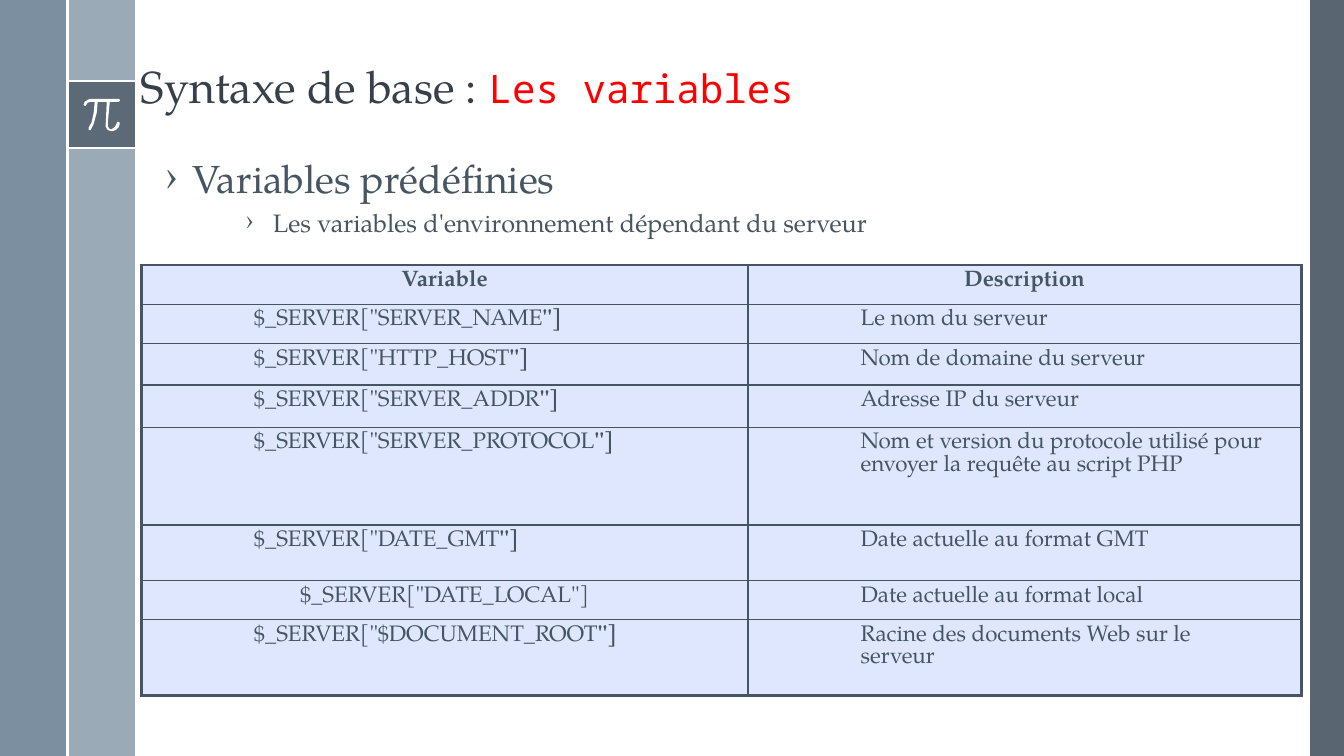
from lxml.etree import SubElement
from pptx import Presentation
from pptx.dml.color import RGBColor
from pptx.enum.shapes import MSO_CONNECTOR, MSO_SHAPE
from pptx.enum.text import MSO_ANCHOR, PP_ALIGN
from pptx.oxml.ns import qn
from pptx.util import Cm, Pt

SERIF, MONO = "TeX Gyre Pagella", "Noto Sans Mono"
SLATE, WHITE, CELL_FILL = "465562", "FFFFFF", "DEE7FE"
WIDTH, HEIGHT, STRIP = 33.87, 19.05, 1.7
BADGE_TOP, BADGE_BOTTOM = 2.05, 3.74

# left, top, width, height, colour, opacity in percent
PANELS = [
    (33.02, 0, WIDTH - 33.02, HEIGHT, "475562", 90),
    (STRIP, 0, STRIP, HEIGHT, "9BAAB7", 100),
    (0, 0, STRIP, HEIGHT, "6A8093", 88),
    (STRIP, BADGE_TOP, STRIP, BADGE_BOTTOM - BADGE_TOP, "475562", 75),
]
WHITE_LINES = [
    (STRIP, BADGE_TOP, 2 * STRIP, BADGE_TOP),
    (STRIP, BADGE_BOTTOM, 2 * STRIP, BADGE_BOTTOM),
    (STRIP, 0, STRIP, HEIGHT),
]
PI_UNIT = 0.0254
PI_OUTLINE = [
    (118, 98), (90, 98), (87, 98.7), (84.5, 101), (83, 104), (84, 105), (85, 105),
    (87, 102.3), (90, 101), (94, 101), (93, 112), (91, 121), (88, 127), (87.6, 128),
    (88, 129), (89, 129.4), (90, 129), (93, 123), (95.5, 112), (97, 101), (106, 101),
    (105, 122), (105.2, 126), (107, 129), (110, 130), (112, 130), (115, 128.7),
    (117.5, 126), (119, 122), (118, 121), (116.5, 121), (115.8, 122), (114, 126),
    (111, 128), (109, 128), (108, 127), (107.2, 125), (107, 122), (109, 101),
    (118, 101), (119, 100), (119, 99),
]

TITLE = [("Syntaxe de base : ", 32, SERIF, "35404A"), ("Les variables", 28, MONO, "FF0000")]
# text, size, left margin, space before
BULLETS = [
    ("Variables prédéfinies", 28, 0.69, 0),
    ("Les variables d'environnement dépendant du serveur", 18, 2.72, 6),
]
BULLET_HANG = 0.69

HEADINGS = ["Variable", "Description"]
# variable, bold ending, description lines, row height
VARIABLES = [
    ('$_SERVER["SERVER_NAME', '"]', ["Le nom du serveur"], 0.99),
    ('$_SERVER["HTTP_HOST', '"]', ["Nom de domaine du serveur"], 1.04),
    ('$_SERVER["SERVER_ADDR', '"]', ["Adresse IP du serveur"], 1.07),
    ('$_SERVER["SERVER_PROTOCOL', '"]',
     ["Nom et version du protocole utilisé pour envoyer la requête au script PHP"], 2.46),
    ('$_SERVER["DATE_GMT', '"]', ["Date actuelle au format GMT"], 1.4),
    ('$_SERVER["DATE_LOCAL"]', "", ["Date actuelle au format local"], 0.99),
    ('$_SERVER["$DOCUMENT_ROOT', '"]', ["Racine des documents Web sur le", "serveur"], 1.91),
]
HEADING_HEIGHT = 0.99
COLUMN_WIDTHS = [15.29, 13.94]
TABLE_LEFT, TABLE_TOP = 3.56, 6.68
CELL_INDENT = 2.54
OUTER_LINE, INNER_LINE = 2.25, 1


def color(value):
    return RGBColor.from_string(value)


def add_run(para, text, size, font=SERIF, ink=SLATE, bold=False):
    span = para.add_run()
    span.text = text
    span.font.size = Pt(size)
    span.font.name = font
    span.font.bold = bold
    span.font.color.rgb = color(ink)


def set_indent(para, margin, first=0):
    properties = para._p.get_or_add_pPr()
    properties.set("marL", str(Cm(margin)))
    properties.set("indent", str(Cm(first)))
    return properties


def fill_plain(shape, value, opacity=100):
    shape.shadow.inherit = False
    shape.line.fill.background()
    shape.fill.solid()
    shape.fill.fore_color.rgb = color(value)
    if opacity < 100:
        tint = shape.fill._xPr.find(qn("a:solidFill"))[0]
        SubElement(tint, qn("a:alpha")).set("val", str(opacity * 1000))


def add_text_box(page, left, top, width, height):
    frame = page.shapes.add_textbox(Cm(left), Cm(top), Cm(width), Cm(height)).text_frame
    frame.word_wrap = True
    return frame


def add_side_band(page):
    for left, top, width, height, value, opacity in PANELS:
        panel = page.shapes.add_shape(
            MSO_SHAPE.RECTANGLE, Cm(left), Cm(top), Cm(width), Cm(height))
        fill_plain(panel, value, opacity)
    for ends in WHITE_LINES:
        line = page.shapes.add_connector(MSO_CONNECTOR.STRAIGHT, *map(Cm, ends))
        line.line.color.rgb = color(WHITE)
        line.line.width = Pt(1.5)
        SubElement(line._element.spPr, qn("a:effectLst"))
    builder = page.shapes.build_freeform(*PI_OUTLINE[0], scale=Cm(PI_UNIT))
    builder.add_line_segments(PI_OUTLINE[1:], close=True)
    fill_plain(builder.convert_to_shape(), WHITE)


def add_title(page):
    frame = add_text_box(page, 3.3, 0, 29.69, 2.97)
    frame.vertical_anchor = MSO_ANCHOR.BOTTOM
    para = frame.paragraphs[0]
    para.line_spacing = 0.9
    for piece in TITLE:
        add_run(para, *piece)


def add_bullets(page):
    frame = add_text_box(page, 3.91, 3.91, 29.39, 2.6)
    for index, (text, size, margin, before) in enumerate(BULLETS):
        para = frame.add_paragraph() if index else frame.paragraphs[0]
        properties = set_indent(para, margin, -BULLET_HANG)
        SubElement(properties, qn("a:buChar")).set("char", "›")
        para.line_spacing = 0.9
        para.space_before = Pt(before)
        add_run(para, text, size)


def style_cell(cell, row, column, last_row):
    cell.margin_left = cell.margin_right = Cm(0.3)
    cell.margin_top = cell.margin_bottom = Cm(0.13)
    outer = {"L": column == 0, "R": column == 1, "T": row == 0, "B": row == last_row}
    properties = cell._tc.get_or_add_tcPr()
    for side, is_outer in outer.items():
        border = SubElement(properties, qn(f"a:ln{side}"))
        border.set("w", str(Pt(OUTER_LINE if is_outer else INNER_LINE)))
        paint = SubElement(border, qn("a:solidFill"))
        SubElement(paint, qn("a:srgbClr")).set("val", SLATE)
    cell.fill.solid()
    cell.fill.fore_color.rgb = color(CELL_FILL)


def add_variable_table(page):
    heights = [HEADING_HEIGHT] + [entry[-1] for entry in VARIABLES]
    table = page.shapes.add_table(
        len(heights), len(COLUMN_WIDTHS), Cm(TABLE_LEFT), Cm(TABLE_TOP),
        Cm(sum(COLUMN_WIDTHS)), Cm(sum(heights))).table
    table.first_row = table.horz_banding = False
    for column, width in zip(table.columns, COLUMN_WIDTHS):
        column.width = Cm(width)
    for row, height in enumerate(heights):
        table.rows[row].height = Cm(height)
        for column in range(len(COLUMN_WIDTHS)):
            style_cell(table.cell(row, column), row, column, len(heights) - 1)

    for column, heading in enumerate(HEADINGS):
        para = table.cell(0, column).text_frame.paragraphs[0]
        para.alignment = PP_ALIGN.CENTER
        add_run(para, heading, 16, bold=True)
    for row, (name, ending, lines, _) in enumerate(VARIABLES, 1):
        para = table.cell(row, 0).text_frame.paragraphs[0]
        add_run(para, name, 16)
        if ending:
            set_indent(para, CELL_INDENT)
            add_run(para, ending, 16, bold=True)
        else:
            para.alignment = PP_ALIGN.CENTER
        frame = table.cell(row, 1).text_frame
        for index, text in enumerate(lines):
            para = frame.add_paragraph() if index else frame.paragraphs[0]
            set_indent(para, CELL_INDENT)
            add_run(para, text, 16)


def main():
    deck = Presentation()
    deck.slide_width, deck.slide_height = Cm(WIDTH), Cm(HEIGHT)
    page = deck.slides.add_slide(deck.slide_layouts[6])
    add_side_band(page)
    add_title(page)
    add_bullets(page)
    add_variable_table(page)
    deck.save("out.pptx")


if __name__ == "__main__":
    main()
